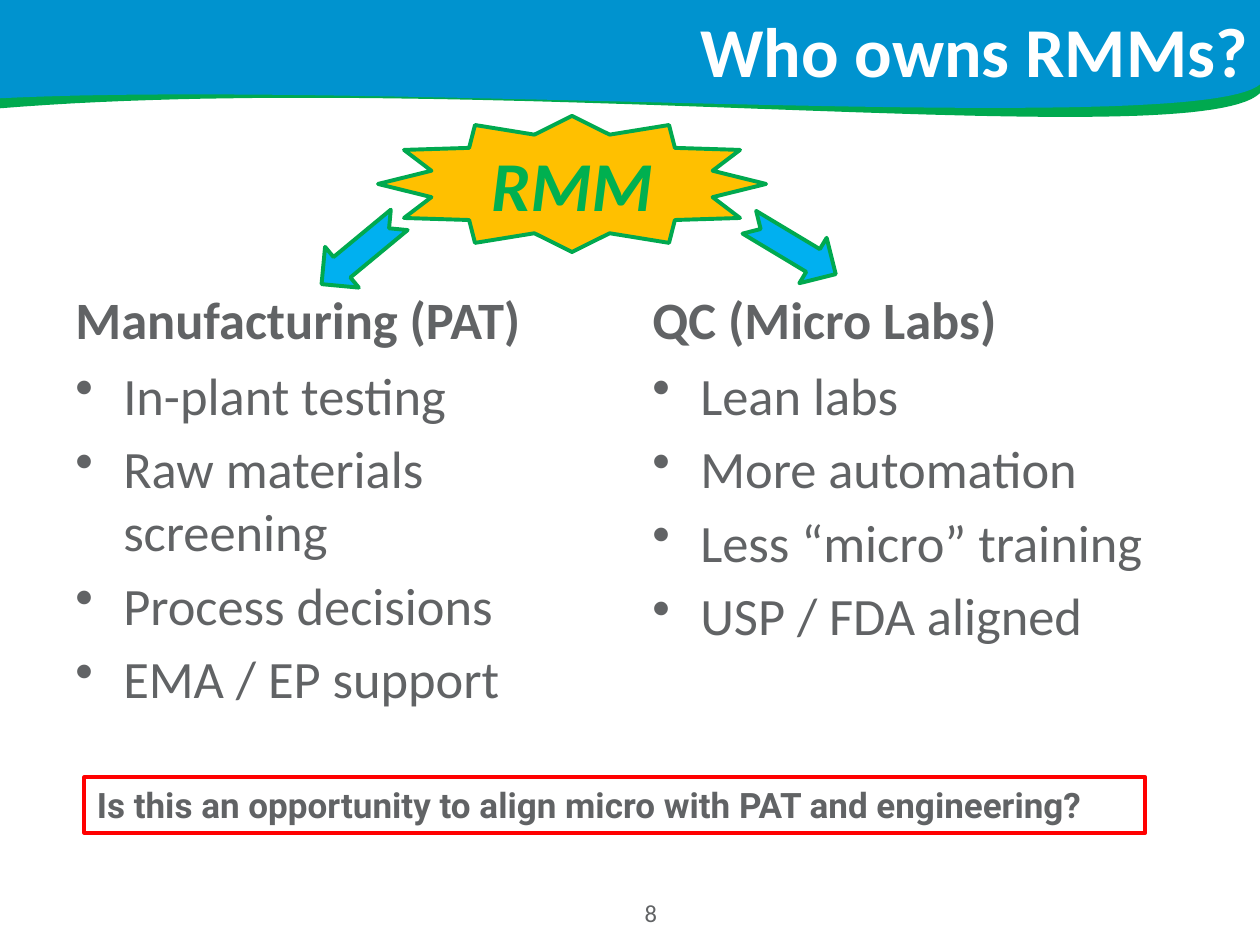
from lxml import etree
from pptx import Presentation
from pptx.dml.color import RGBColor
from pptx.enum.shapes import MSO_SHAPE as Preset
from pptx.enum.text import MSO_ANCHOR as Anchor, PP_ALIGN as Align
from pptx.oxml.ns import qn
from pptx.util import Inches, Pt

SLIDE_WIDTH, SLIDE_HEIGHT = Inches(10), Inches(7.5)
COLUMNS, ROWS = 100, 75
CELL = SLIDE_WIDTH / COLUMNS
GREY, GREEN, BLUE = "616365", "00A94F", "0093CF"
BODY = {"name": "Calibri", "size": Pt(30), "color": GREY, "bold": False}
HEADING = BODY | {"bold": True}
CURVE_STEPS = 60

TOPICS = {
    "Manufacturing (PAT)": ["In-plant testing", "Raw materials screening",
                            "Process decisions", "EMA / EP support"],
    "QC (Micro Labs)": ["Lean labs", "More automation",
                        "Less “micro” training", "USP / FDA aligned"],
}


def rgb(hex_color):
    return RGBColor.from_string(hex_color)


def cells(*counts):
    """Turn counts of grid cells into slide lengths."""
    return [round(count * CELL) for count in counts]


def paint(shape, fill=None, outline=None):
    shape.shadow.inherit = False
    if fill:
        shape.fill.solid()
        shape.fill.fore_color.rgb = rgb(fill)
    else:
        shape.fill.background()
    if outline:
        shape.line.color.rgb = rgb(outline)
        shape.line.width = Pt(2.25)
    else:
        shape.line.fill.background()


def add_bullet(paragraph):
    indent = Inches(0.38)
    properties = paragraph._p.get_or_add_pPr()
    properties.set("marL", str(indent))
    properties.set("indent", str(-indent))
    etree.SubElement(properties, qn("a:buChar")).set("char", "•")


def write(shape, lines, style, align=Align.LEFT, anchor=Anchor.TOP, bullets=False):
    frame = shape.text_frame
    frame.word_wrap = True
    frame.vertical_anchor = anchor
    for number, line in enumerate(lines):
        paragraph = frame.add_paragraph() if number else frame.paragraphs[0]
        paragraph.alignment = align
        if number:
            paragraph.space_before = Pt(6)
        if bullets:
            add_bullet(paragraph)
        run = paragraph.add_run()
        run.text = line
        for attribute, value in style.items():
            if attribute == "color":
                run.font.color.rgb = rgb(value)
            else:
                setattr(run.font, attribute, value)


def add_text(slide, place, lines, style, **layout):
    textbox = slide.shapes.add_textbox(*cells(*place))
    write(textbox, lines, style, **layout)
    return textbox


def add_preset(slide, preset, place, fill, outline, rotation=0):
    shape = slide.shapes.add_shape(preset, *cells(*place))
    shape.rotation = rotation
    paint(shape, fill, outline)
    return shape


def bezier(start, pull_out, pull_in, end):
    """Points along a cubic curve, both ends included."""
    for step in range(CURVE_STEPS + 1):
        t = step / CURVE_STEPS
        weights = ((1 - t) ** 3, 3 * t * (1 - t) ** 2, 3 * t * t * (1 - t), t ** 3)
        yield tuple(sum(weight * value for weight, value in zip(weights, axis))
                    for axis in zip(start, pull_out, pull_in, end))


def add_wave(slide, lower_edge, color):
    """Fill the slide from its top down to a curved lower edge."""
    outline = [cells(*point) for point in [*bezier(*lower_edge), (COLUMNS, 0)]]
    builder = slide.shapes.build_freeform(0, 0)
    builder.add_line_segments(outline, close=True)
    paint(builder.convert_to_shape(), color)


def add_topic(slide, left, heading, points):
    width, top, split, bottom = 44.2, 18.2, 28.3, 65
    add_text(slide, (left, top, width, split - top), [heading], HEADING,
             anchor=Anchor.BOTTOM)
    add_text(slide, (left, split, width, bottom - split), points, BODY, bullets=True)


def main():
    deck = Presentation()
    deck.slide_width, deck.slide_height = SLIDE_WIDTH, SLIDE_HEIGHT
    slide = deck.slides.add_slide(deck.slide_layouts[6])

    add_wave(slide, [(0, 8.6), (37.9, 5.5), (94.9, 12.4), (100, 7.4)], GREEN)
    add_wave(slide, [(0, 7.8), (30.4, 6.3), (95.1, 11), (100, 6.7)], BLUE)
    add_text(slide, (42.5, 70.8, 18.3, ROWS - 70.8), ["8"],
             BODY | {"size": Pt(14)}, align=Align.CENTER)

    for left, (heading, points) in zip((5, 50.8), TOPICS.items()):
        add_topic(slide, left, heading, points)

    title = add_text(slide, (10.9, 0, 89.1, 7.8), ["Who owns RMMs?"],
                     HEADING | {"size": Pt(40), "color": "FFFFFF"},
                     align=Align.RIGHT, anchor=Anchor.MIDDLE)
    title.text_frame.margin_top = title.text_frame.margin_bottom = 0

    star = add_preset(slide, Preset.STAR_12_POINT, (30, 9.2, 30.8, 10.8), "FFC000", GREEN)
    write(star, ["RMM"], HEADING | {"size": Pt(40), "color": "00B050", "italic": True},
          align=Align.CENTER, anchor=Anchor.MIDDLE)
    for left, top, rotation in ((58.9, 17.6, 31), (24.6, 17.9, 140.4)):
        add_preset(slide, Preset.NOTCHED_RIGHT_ARROW, (left, top, 8, 4.2),
                   "00B0F0", GREEN, rotation)

    question = add_preset(slide, Preset.RECTANGLE, (6.7, 61.7, 84.2, 4.4), None, "FF0000")
    write(question, ["Is this an opportunity to align micro with PAT and engineering?"],
          HEADING | {"name": "Roboto", "size": Pt(20)})

    deck.save("out.pptx")


if __name__ == "__main__":
    main()
